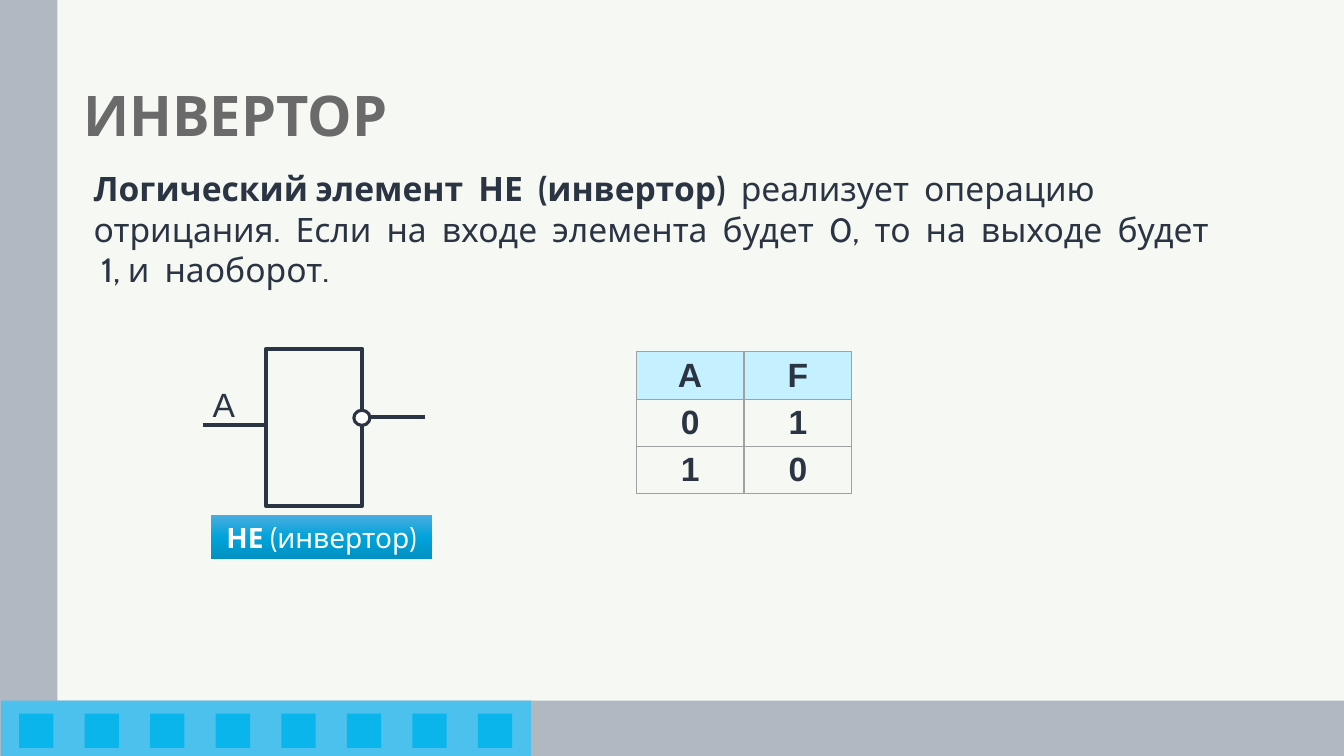
from copy import deepcopy

from lxml.etree import SubElement
from pptx import Presentation
from pptx.dml.color import RGBColor
from pptx.enum.shapes import MSO_CONNECTOR, MSO_SHAPE
from pptx.enum.text import MSO_ANCHOR, PP_ALIGN
from pptx.oxml import parse_xml
from pptx.oxml.ns import nsdecls, qn
from pptx.util import Pt

PX = 9144  # 100 px to the inch
INK, WHITE, GREY = "2A3442", "FFFFFF", "B2B8C2"


def color(value):
    return RGBColor.from_string(value)


def write(frame, spans, align, font_format, ink):
    """Fill the first paragraph with (text, bold) spans."""
    para = frame.paragraphs[0]
    para.alignment = align
    for text, bold in spans:
        span = para.add_run()
        span.text = text
        for name, value in {**font_format, "bold": bold}.items():
            setattr(span.font, name, value)
        span.font.color.rgb = color(ink)
    return para


deck = Presentation()
deck.slide_width, deck.slide_height = 1333 * PX, 750 * PX
page = deck.slides.add_slide(deck.slide_layouts[6])
page.background.fill.solid()
page.background.fill.fore_color.rgb = color("F6F8F3")

# Frame bars and the row of squares
bars = [
    (0, 0, 57, 750, GREY),
    (0, 695, 1333, 55, GREY),
    (1, 695, 526, 55, "4DC1ED"),
]
squares = [(19 + 65 * i, 708, 34, 34, "0AB5EC") for i in range(8)]
for left, top, width, height, fill in bars + squares:
    bar = page.shapes.add_shape(
        MSO_SHAPE.RECTANGLE, left * PX, top * PX, width * PX, height * PX)
    bar.shadow.inherit = False
    bar.fill.solid()
    bar.fill.fore_color.rgb = color(fill)
    bar.line.fill.background()

# Truth table
rows = [("А", "F"), ("0", "1"), ("1", "0")]
table = page.shapes.add_table(
    3, 2, 631 * PX, 349 * PX, 214 * PX, 141 * PX).table
for column in table.columns:
    column.width = 107 * PX
for r, row in enumerate(rows):
    table.rows[r].height = 47 * PX
    for c, text in enumerate(row):
        cell = table.cell(r, c)
        cell.margin_top = cell.margin_bottom = 4 * PX
        cell.vertical_anchor = MSO_ANCHOR.MIDDLE
        write(cell.text_frame, [(text, True)], PP_ALIGN.CENTER,
              {"name": "Arial", "size": Pt(24)}, INK)
        if r == 0:
            cell.fill.solid()
            cell.fill.fore_color.rgb = color("C5F0FF")
        else:
            cell.fill.background()
        properties = cell._tc.get_or_add_tcPr()
        for index, side in enumerate(("lnL", "lnR", "lnT", "lnB")):
            properties.insert(index, parse_xml(
                f'<a:{side} {nsdecls("a")} w="12700"><a:solidFill>'
                f'<a:srgbClr val="A1A1A1"/></a:solidFill></a:{side}>'))

# Inverter symbol: body, wires, negation circle
body = page.shapes.add_shape(
    MSO_SHAPE.RECTANGLE, 264 * PX, 346 * PX, 95 * PX, 156 * PX)
body.fill.background()
for start, end, y in [(201, 264, 422), (359, 422, 414)]:
    wire = page.shapes.add_connector(
        MSO_CONNECTOR.STRAIGHT, start * PX, y * PX, end * PX, y * PX)
    wire.line.color.rgb = color(INK)
    wire.line.width = Pt(3)
    SubElement(wire._element.spPr, qn("a:effectLst"))
circle = page.shapes.add_shape(
    MSO_SHAPE.OVAL, 351 * PX, 407 * PX, 16 * PX, 15 * PX)
circle.fill.solid()
circle.fill.fore_color.rgb = color(WHITE)
for shape, weight in [(body, 3), (circle, 2.25)]:
    shape.shadow.inherit = False
    shape.line.color.rgb = color(INK)
    shape.line.width = Pt(weight)

# Gradient label under the symbol
label = page.shapes.add_shape(
    MSO_SHAPE.RECTANGLE, 209 * PX, 511 * PX, 220 * PX, 44 * PX)
label.shadow.inherit = False
label.line.fill.background()
label.fill.gradient()
label.fill.gradient_angle = 270
stop_list = label._element.spPr.find(qn("a:gradFill")).find(qn("a:gsLst"))
stop_list.insert(1, deepcopy(stop_list[0]))
stops = [(0, "4BADE0"), (0.5, "00A3DA"), (1, "0091C2")]
for stop, (position, shade) in zip(label.fill.gradient_stops, stops):
    stop.position = position
    stop.color.rgb = color(shade)
label.text_frame.vertical_anchor = MSO_ANCHOR.MIDDLE
write(label.text_frame, [("НЕ", True), (" (инвертор)", False)],
      PP_ALIGN.CENTER, {"name": "Cabin", "size": Pt(20)}, WHITE)

# Title, input name and description
texts = [
    (73, 45, 1188, 145, [("ИНВЕРТОР", True)], "Cabin", 40, "6A6A6A",
     MSO_ANCHOR.MIDDLE, 0.9),
    (201, 376, 39, 50, [("А", False)], "Arial", 24, INK, MSO_ANCHOR.TOP, 1.0),
    (83, 162, 1127, 131, [
        ("Логический элемент  НЕ  (инвертор)  ", True),
        ("реализует  операцию  отрицания.  Если  на  входе  элемента  будет  "
         "0,  то  на  выходе  будет  1, и  наоборот.", False),
    ], "Cabin", 24, INK, MSO_ANCHOR.TOP, 1.0),
]
for left, top, width, height, spans, font, size, ink, anchor, spacing in texts:
    box = page.shapes.add_textbox(left * PX, top * PX, width * PX, height * PX)
    box.text_frame.word_wrap = True
    box.text_frame.vertical_anchor = anchor
    para = write(box.text_frame, spans, PP_ALIGN.LEFT,
                 {"name": font, "size": Pt(size)}, ink)
    para.line_spacing = spacing

deck.save("out.pptx")
